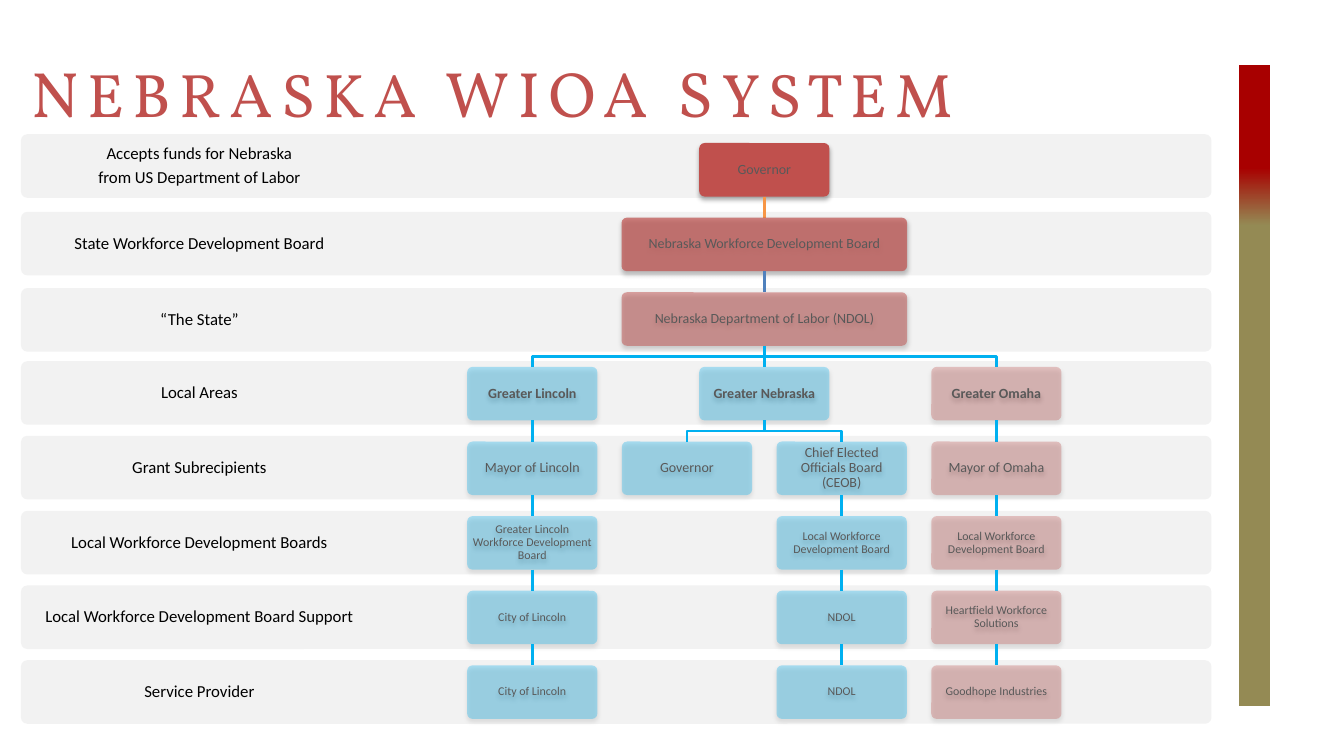
from lxml.etree import SubElement
from pptx import Presentation
from pptx.dml.color import RGBColor
from pptx.enum.shapes import MSO_CONNECTOR, MSO_SHAPE
from pptx.enum.text import MSO_ANCHOR, MSO_AUTO_SIZE, PP_ALIGN
from pptx.oxml.ns import qn
from pptx.util import Pt

THEME = {
    "red": "C0504D", "blue": "00B0F0", "band": "F2F2F2",
    "label": "000000", "box text": "595959",
    "orange link": "F79646", "navy link": "4F81BD",
    "bar top": "A80000", "bar bottom": "948A54",
    "title font": "Vollkorn", "body font": "Calibri",
    "large cap": 45.8, "small cap": 43.9,
    "label size": 12, "box size": 10, "small box size": 8.5,
}

TITLE_RUNS = [("N", "large cap"), ("EBRASKA", "small cap"),
              (" WIOA S", "large cap"), ("YSTEM", "small cap")]

# Top of the band, label lines
BANDS = [
    (95.9, ["Accepts funds for Nebraska", "from US Department of Labor"]),
    (151.3, ["State Workforce Development Board"]),
    (205.8, ["“The State”"]),
    (258, ["Local Areas"]),
    (311.3, ["Grant Subrecipients"]),
    (364.9, ["Local Workforce Development Boards"]),
    (418.2, ["Local Workforce Development Board Support"]),
    (471.6, ["Service Provider"]),
]

# Column of each branch, in half-box steps from the leftmost one
LINCOLN, STATE_SIDE, CENTRE, CEOB, OMAHA = 0, 2, 3, 4, 6

# (level, column): text, colour, opacity in percent
BOXES = {
    (0, CENTRE): ("Governor", "red", 100),
    (1, CENTRE): ("Nebraska Workforce Development Board", "red", 70),
    (2, CENTRE): ("Nebraska Department of Labor (NDOL)", "red", 50),
    (3, LINCOLN): ("Greater Lincoln", "blue", 30),
    (4, LINCOLN): ("Mayor of Lincoln", "blue", 30),
    (5, LINCOLN): ("Greater Lincoln Workforce Development Board", "blue", 30),
    (6, LINCOLN): ("City of Lincoln", "blue", 30),
    (7, LINCOLN): ("City of Lincoln", "blue", 30),
    (3, CENTRE): ("Greater Nebraska", "blue", 30),
    (4, STATE_SIDE): ("Governor", "blue", 30),
    (4, CEOB): ("Chief Elected Officials Board (CEOB)", "blue", 30),
    (5, CEOB): ("Local Workforce Development Board", "blue", 30),
    (6, CEOB): ("NDOL", "blue", 30),
    (7, CEOB): ("NDOL", "blue", 30),
    (3, OMAHA): ("Greater Omaha", "red", 30),
    (4, OMAHA): ("Mayor of Omaha", "red", 30),
    (5, OMAHA): ("Local Workforce Development Board", "red", 30),
    (6, OMAHA): ("Heartfield Workforce Solutions", "red", 30),
    (7, OMAHA): ("Goodhope Industries", "red", 30),
}
LOCAL_AREA_LEVEL = 3
WIDE_LEVELS = (1, 2)
FIRST_SMALL_LEVEL = 5
LINK_COLOURS = {1: "orange link", 2: "navy link"}

BAND_LEFT, BAND_WIDTH, BAND_HEIGHT, LABEL_WIDTH = 15, 850.4, 45.4, 255
FIRST_CENTRE, COLUMN_STEP = 380.2, 55.25
FIRST_TOP, LEVEL_STEP = 102.2, 53.3
BOX_WIDTH, WIDE_BOX_WIDTH, BOX_HEIGHT = 93, 204, 38.2


def colour(name):
    return RGBColor.from_string(THEME[name])


def centre_of(column):
    return FIRST_CENTRE + column * COLUMN_STEP


def top_of(level):
    return FIRST_TOP + level * LEVEL_STEP


def add_filled_shape(slide, kind, left, top, width, height, fill):
    shape = slide.shapes.add_shape(kind, Pt(left), Pt(top), Pt(width), Pt(height))
    shape.shadow.inherit = False
    shape.line.fill.background()
    if kind == MSO_SHAPE.ROUNDED_RECTANGLE:
        shape.adjustments[0] = 0.1
    shape.fill.solid()
    shape.fill.fore_color.rgb = colour(fill)
    return shape


def write_text(shape, lines, size, text_colour, margin, space_after=0, bold=False):
    frame = shape.text_frame
    frame_format = {"word_wrap": True, "vertical_anchor": MSO_ANCHOR.MIDDLE}
    for side in ("left", "right", "top", "bottom"):
        frame_format[f"margin_{side}"] = Pt(margin)
    for name, value in frame_format.items():
        setattr(frame, name, value)
    for index, line in enumerate(lines):
        paragraph = frame.add_paragraph() if index else frame.paragraphs[0]
        paragraph.alignment = PP_ALIGN.CENTER
        paragraph.line_spacing = 0.9
        paragraph.space_after = Pt(space_after)
        run = paragraph.add_run()
        run.text = line
        run.font.color.rgb = colour(text_colour)
        for name, value in {"name": THEME["body font"], "size": Pt(THEME[size]),
                            "bold": bold}.items():
            setattr(run.font, name, value)


def set_opacity(colour_element, percent):
    SubElement(colour_element, qn("a:alpha"), val=str(percent * 1000))


def add_drop_shadow(shape):
    effects = shape._element.spPr.find(qn("a:effectLst"))
    shadow = SubElement(effects, qn("a:outerShdw"), blurRad=str(Pt(3.5)),
                        dist=str(Pt(2.2)), dir="5400000", rotWithShape="0")
    set_opacity(SubElement(shadow, qn("a:srgbClr"), val="000000"), 32)


def add_title(slide):
    title = slide.shapes.title
    for name, value in {"left": 15, "top": 33, "width": 730, "height": 63}.items():
        setattr(title, name, Pt(value))
    frame = title.text_frame
    for name, value in {"auto_size": MSO_AUTO_SIZE.NONE, "word_wrap": True,
                        "vertical_anchor": MSO_ANCHOR.TOP, "margin_top": Pt(5)}.items():
        setattr(frame, name, value)
    paragraph = frame.paragraphs[0]
    paragraph.alignment = PP_ALIGN.LEFT
    for text, size in TITLE_RUNS:
        run = paragraph.add_run()
        run.text = text
        run.font.name = THEME["title font"]
        run.font.size = Pt(THEME[size])
        run.font.color.rgb = colour("red")
        run.font._element.set("spc", "600")


def add_side_bar(slide):
    bar = add_filled_shape(slide, MSO_SHAPE.RECTANGLE, 885, 46.5, 22.5, 458, "bar top")
    bar.fill.gradient()
    bar.fill.gradient_angle = 270
    stops = [(0.16, "bar top"), (0.25, "bar bottom")]
    for stop, (position, name) in zip(bar.fill.gradient_stops, stops):
        stop.position = position
        stop.color.rgb = colour(name)


def add_band(slide, top, lines):
    add_filled_shape(slide, MSO_SHAPE.ROUNDED_RECTANGLE, BAND_LEFT, top,
                     BAND_WIDTH, BAND_HEIGHT, "band")
    label = slide.shapes.add_textbox(Pt(BAND_LEFT), Pt(top), Pt(LABEL_WIDTH), Pt(BAND_HEIGHT))
    write_text(label, lines, "label size", "label", margin=6.5, space_after=4.2)


def parent_column(level, column):
    """Columns meet at the centre above the local areas and at Greater Nebraska."""
    if level <= LOCAL_AREA_LEVEL or (level == 4 and column in (STATE_SIDE, CEOB)):
        return CENTRE
    return column


def add_link(slide, level, column):
    """Join a box to its parent, with a bend halfway when the columns differ."""
    start_x, end_x = centre_of(parent_column(level, column)), centre_of(column)
    start_y, end_y = top_of(level - 1) + BOX_HEIGHT, top_of(level)
    if start_x == end_x:
        link = slide.shapes.add_connector(MSO_CONNECTOR.STRAIGHT, Pt(start_x), Pt(start_y),
                                          Pt(end_x), Pt(end_y))
        SubElement(link._element.spPr, qn("a:effectLst"))
    else:
        middle_y = (start_y + end_y) / 2
        builder = slide.shapes.build_freeform(Pt(start_x), Pt(start_y))
        bends = [(start_x, middle_y), (end_x, middle_y), (end_x, end_y)]
        builder.add_line_segments([(Pt(x), Pt(y)) for x, y in bends], close=False)
        link = builder.convert_to_shape()
        link.fill.background()
        link.shadow.inherit = False
    link.line.color.rgb = colour(LINK_COLOURS.get(level, "blue"))
    link.line.width = Pt(2)


def add_box(slide, level, column, text, fill, opacity):
    width = WIDE_BOX_WIDTH if level in WIDE_LEVELS else BOX_WIDTH
    box = add_filled_shape(slide, MSO_SHAPE.ROUNDED_RECTANGLE, centre_of(column) - width / 2,
                           top_of(level), width, BOX_HEIGHT, fill)
    set_opacity(box._element.spPr.find(qn("a:solidFill"))[0], opacity)
    add_drop_shadow(box)
    size = "small box size" if level >= FIRST_SMALL_LEVEL else "box size"
    write_text(box, [text], size, "box text", margin=3, bold=level == LOCAL_AREA_LEVEL)


def main():
    presentation = Presentation()
    presentation.slide_width, presentation.slide_height = Pt(960), Pt(540)
    slide = presentation.slides.add_slide(presentation.slide_layouts[5])
    add_title(slide)
    add_side_bar(slide)
    for top, lines in BANDS:
        add_band(slide, top, lines)
    for (level, column), (text, fill, opacity) in BOXES.items():
        if level:
            add_link(slide, level, column)
        add_box(slide, level, column, text, fill, opacity)
    presentation.save("out.pptx")


if __name__ == "__main__":
    main()
